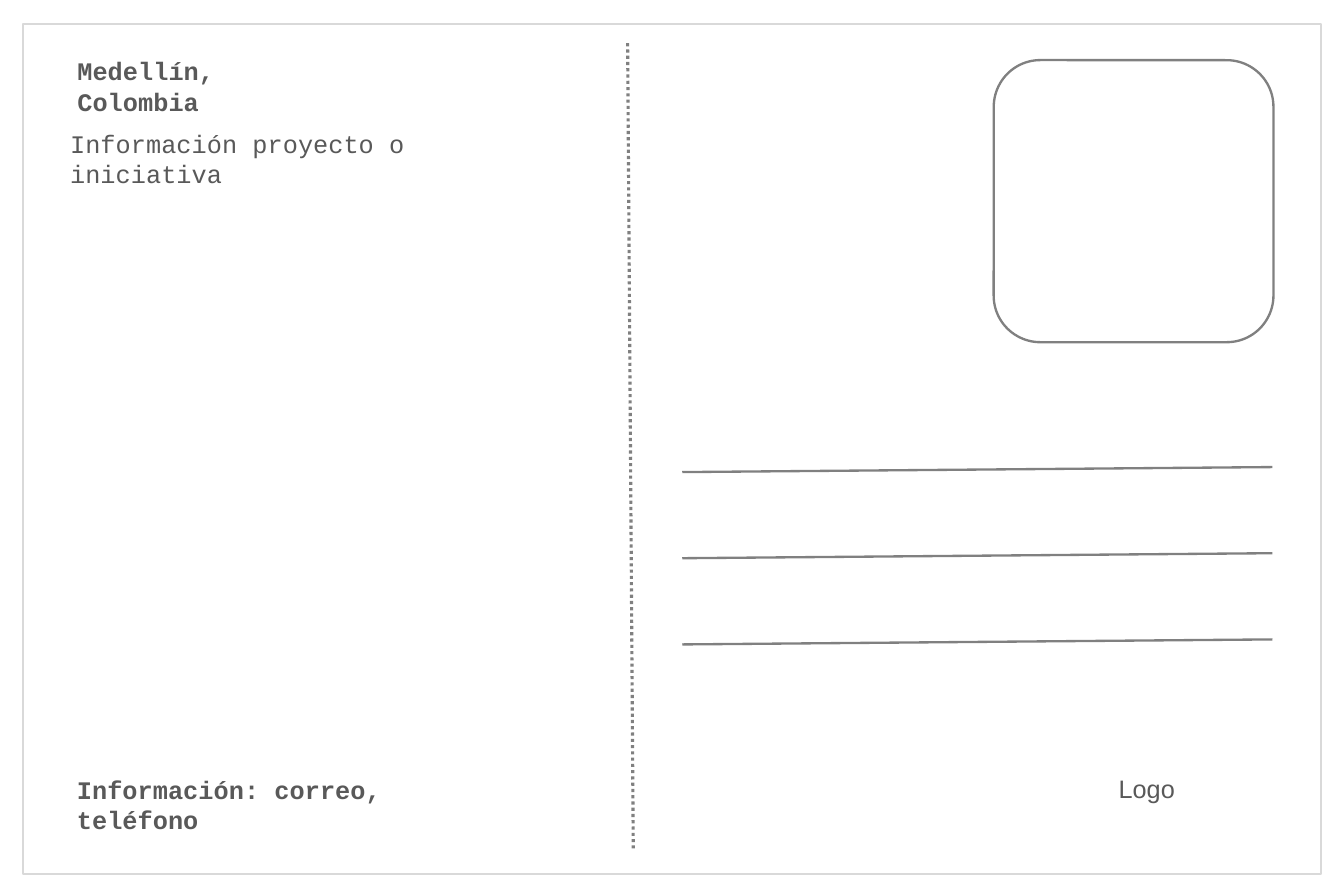
"""Build the back of a postcard with text, stamp frame and address lines."""
from lxml.etree import SubElement
from pptx import Presentation
from pptx.dml.color import RGBColor
from pptx.enum.dml import MSO_LINE
from pptx.enum.shapes import MSO_CONNECTOR, MSO_SHAPE
from pptx.enum.text import MSO_ANCHOR, MSO_AUTO_SIZE, PP_ALIGN
from pptx.oxml.ns import qn
from pptx.util import Inches, Pt

HUES = {"ink": "595959", "rule": "808080", "edge": "D9D9D9"}
CELL = 0.1


def put(frame, text, font="Courier New", size=8, bold=False, hue="ink", wrap=True):
    frame.word_wrap = wrap
    frame.auto_size = MSO_AUTO_SIZE.SHAPE_TO_FIT_TEXT
    frame.vertical_anchor = MSO_ANCHOR.TOP
    frame.margin_left = Inches(0.1)
    frame.margin_right = Inches(0.2 if wrap else 0.1)
    frame.margin_top = frame.margin_bottom = Inches(0.05)
    part = frame.paragraphs[0]
    part.alignment = PP_ALIGN.LEFT
    run = part.add_run()
    run.text = text
    run.font.name, run.font.size, run.font.bold = font, Pt(size), bold
    run.font.color.rgb = RGBColor.from_string(HUES[hue])


class Card:
    def __init__(self, deck):
        self.slide = deck.slides.add_slide(deck.slide_layouts[5])
        self.items = self.slide.shapes

    def grid(self, *cells):
        return [Inches(cell * CELL) for cell in cells]

    def pen(self, line, hue, width):
        line.color.rgb = RGBColor.from_string(HUES[hue])
        line.width = Pt(width)

    def title(self, box, text, **style):
        item = self.items.title
        item.left, item.top, item.width, item.height = self.grid(*box)
        put(item.text_frame, text, **style)

    def note(self, box, text, **style):
        put(self.items.add_textbox(*self.grid(*box)).text_frame, text, **style)

    def frame(self, kind, box, hue, width):
        item = self.items.add_shape(kind, *self.grid(*box))
        item.shadow.inherit = False
        item.fill.background()
        self.pen(item.line, hue, width)

    def rule(self, ends, width=0.75, dash=None):
        item = self.items.add_connector(MSO_CONNECTOR.STRAIGHT, *self.grid(*ends))
        SubElement(item._element.spPr, qn("a:effectLst"))
        self.pen(item.line, "rule", width)
        if dash:
            item.line.dash_style = dash


def main():
    deck = Presentation()
    deck.slide_width, deck.slide_height = Inches(5.91), Inches(3.94)
    card = Card(deck)
    card.frame(MSO_SHAPE.ROUNDED_RECTANGLE, (43.7, 2.65, 12.3, 12.4), "rule", 0.75)
    for row in range(3):
        drop = 3.79 * row
        card.rule((55.95, 20.54 + drop, 30, 20.76 + drop))
    card.rule((27.6, 1.9, 27.85, 37.4), width=1, dash=MSO_LINE.ROUND_DOT)
    card.title((2.4, 1.95, 14, 2.4), "Medellín, Colombia", bold=True)
    card.note((2.1, 5.15, 23.5, 2.4), "Información proyecto o iniciativa")
    card.note((2.4, 33.55, 21.3, 2.4), "Información: correo, teléfono", bold=True)
    card.note((48.2, 33.5, 4.5, 2.4), "Logo", font="Arial", wrap=False)
    card.frame(MSO_SHAPE.RECTANGLE, (1, 1.05, 57.1, 37.4), "edge", 0.5)
    deck.save("out.pptx")


if __name__ == "__main__":
    main()
